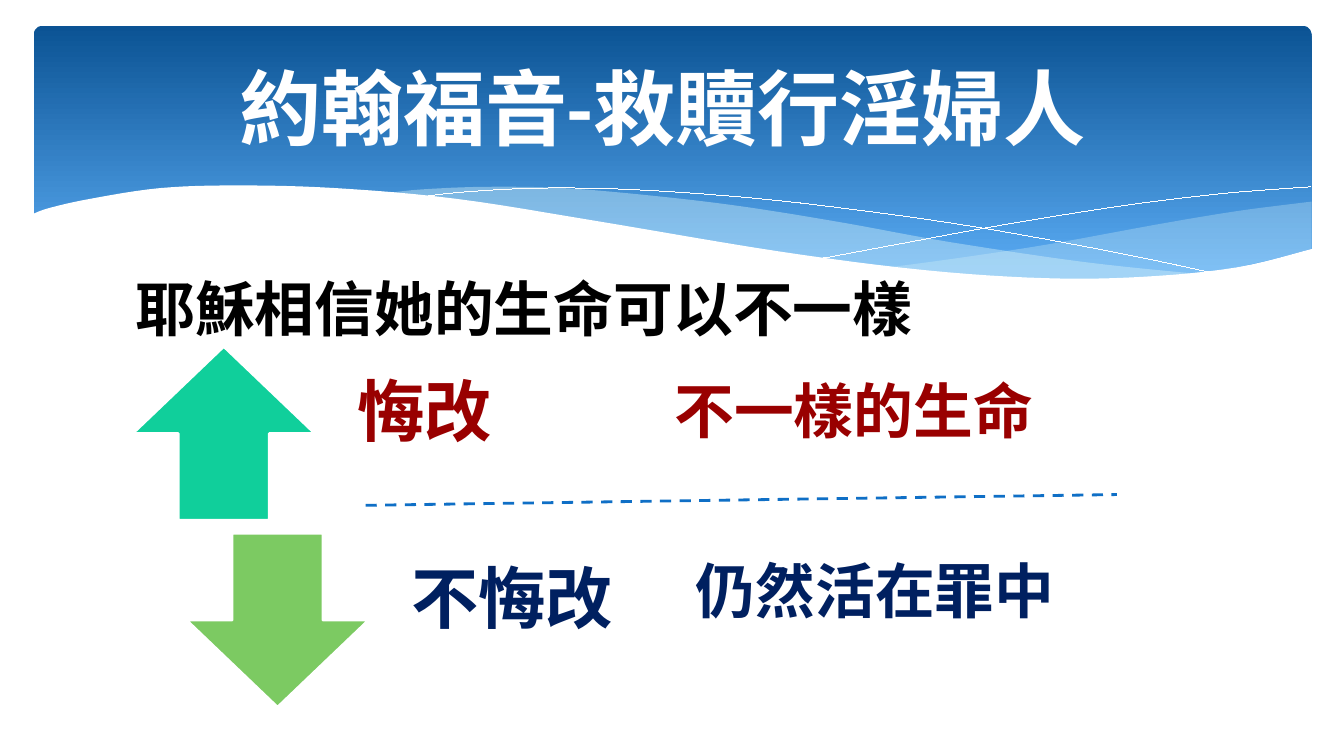
from dataclasses import dataclass

import pptx
import pptx.dml.color
import pptx.enum.dml
import pptx.enum.shapes
import pptx.enum.text
import pptx.oxml
import pptx.oxml.ns
import pptx.util

Inches, Pt = pptx.util.Inches, pptx.util.Pt
SHAPES = pptx.enum.shapes.MSO_SHAPE
TEXT = pptx.enum.text


@dataclass(frozen=True)
class Theme:
    font: str = "Calibri"
    title_size: int = 44
    choice_size: int = 36
    body_size: int = 32
    hairline: float = 0.01
    white: str = "FFFFFF"
    black: str = "000000"
    banner_top: str = "0B5394"
    banner_bottom: str = "59AAF2"
    wave: str = "DBF5F9"
    repent: str = "990000"
    refuse: str = "002060"
    up: str = "10CF9B"
    down: str = "7CCA62"
    divider: str = "0F6FC6"


THEME = Theme()

# Wave edges, in inches from the top left corner of the banner
RIGHT_BAND_TOP = [(9.51, 1.31), (8.96, 1.38), (8.36, 1.48), (7.54, 1.63), (6.81, 1.74), (6.36, 1.8)]
RIGHT_BAND_BOTTOM = [(6.36, 1.8), (6.94, 1.85), (7.56, 1.89), (8.19, 1.88), (8.72, 1.84),
                     (9.17, 1.75), (9.51, 1.66)]
LONG_BAND_TOP = [(8.68, 1.85), (7.82, 1.76), (6.81, 1.61), (6.04, 1.47), (5.3, 1.35), (4.64, 1.27),
                 (3.95, 1.21), (3.36, 1.2), (2.88, 1.22), (2.61, 1.25)]
LONG_BAND_BOTTOM = [(2.61, 1.25), (3.37, 1.33), (4.24, 1.47), (5.05, 1.61), (5.93, 1.75), (6.7, 1.84),
                    (7.36, 1.89), (7.93, 1.9), (8.42, 1.88), (8.68, 1.85)]
FALLING_LINE = [(2.84, 1.28), (3.19, 1.24), (3.76, 1.21), (4.44, 1.22), (5.31, 1.28), (6.11, 1.37),
                (7.02, 1.5), (8.06, 1.69), (8.82, 1.85)]
RISING_LINE = [(5.88, 1.73), (6.47, 1.62), (7.23, 1.48), (8.11, 1.34), (8.85, 1.25), (9.5, 1.2)]
PAGE_EDGE = [(9.52, 1.66), (8.95, 1.8), (8.25, 1.87), (7.53, 1.88), (6.63, 1.82), (5.54, 1.68),
             (4.22, 1.46), (3.15, 1.29), (2.25, 1.21), (1.52, 1.19), (0.94, 1.21), (0.42, 1.29),
             (0.11, 1.36), (-0.02, 1.41)]


def rgb(color):
    return pptx.dml.color.RGBColor.from_string(color)


def smooth(points, steps=6):
    """Catmull-Rom curve through the points."""
    padded = [points[0], *points, points[-1]]
    curve = [points[0]]
    for a, b, c, d in zip(padded, padded[1:], padded[2:], padded[3:]):
        for t in (step / steps for step in range(1, steps + 1)):
            curve.append(tuple(
                (2 * q + (r - p) * t + (2 * p - 5 * q + 4 * r - s) * t ** 2
                 + (3 * q - p - 3 * r + s) * t ** 3) / 2
                for p, q, r, s in zip(a, b, c, d)))
    return curve


def paint(shape, fill=None, line=None, width=THEME.hairline, alpha=None):
    shape.shadow.inherit = False
    if fill:
        shape.fill.solid()
        shape.fill.fore_color.rgb = rgb(fill)
        if alpha is not None:
            color = shape.fill._xPr.find(".//" + pptx.oxml.ns.qn("a:srgbClr"))
            opacity = color.makeelement(pptx.oxml.ns.qn("a:alpha"), {"val": str(alpha * 1000)})
            color.append(opacity)
    else:
        shape.fill.background()
    if line:
        shape.line.color.rgb = rgb(line)
        shape.line.width = Pt(width)
    else:
        shape.line.fill.background()


def outline(slide, left, top, points, closed=True):
    start, *rest = [(Inches(left + x), Inches(top + y)) for x, y in points]
    builder = slide.shapes.build_freeform(*start)
    builder.add_line_segments(rest, close=closed)
    return builder.convert_to_shape()


def write(frame, words, size, color):
    frame.text = words
    font = frame.paragraphs[0].runs[0].font
    font.name, font.size, font.bold = THEME.font, Pt(size), True
    font.color.rgb = rgb(color)


def add_banner(slide, left, top, width, height):
    panel = slide.shapes.add_shape(SHAPES.ROUNDED_RECTANGLE, Inches(left), Inches(top),
                                   Inches(width), Inches(height))
    panel.adjustments[0] = 0.034
    paint(panel)
    panel.fill.gradient()
    panel.fill.gradient_angle = 270
    stops = zip(panel.fill.gradient_stops, (0, 0.9), (THEME.banner_top, THEME.banner_bottom))
    for stop, position, color in stops:
        stop.position = position
        stop.color.rgb = rgb(color)

    # Translucent bands, then the two hairlines
    for upper, lower, alpha in ((RIGHT_BAND_TOP, RIGHT_BAND_BOTTOM, 29),
                                (LONG_BAND_TOP, LONG_BAND_BOTTOM, 40)):
        band = outline(slide, left, top, smooth(upper) + smooth(lower))
        paint(band, THEME.wave, alpha=alpha)
    for points in (FALLING_LINE, RISING_LINE):
        paint(outline(slide, left, top, smooth(points), closed=False), line=THEME.white)

    # White page rising over the foot of the banner
    foot = [(-0.02, 2.28), (width + 0.01, 2.28)]
    paint(outline(slide, left, top, smooth(PAGE_EDGE) + foot), THEME.white)


def add_title(slide, words, left, top, width, height):
    title = slide.shapes.title
    slide.shapes._spTree.append(title._element)  # in front of the banner
    title.left, title.top = Inches(left), Inches(top)
    title.width, title.height = Inches(width), Inches(height)
    write(title.text_frame, words, THEME.title_size, THEME.white)
    title.text_frame.vertical_anchor = TEXT.MSO_ANCHOR.MIDDLE
    title.text_frame.paragraphs[0].alignment = TEXT.PP_ALIGN.CENTER


def add_statement(slide, words, color, left, top, width, height=0.64):
    statement = slide.shapes.add_textbox(Inches(left), Inches(top), Inches(width), Inches(height))
    write(statement.text_frame, words, THEME.body_size, color)
    statement.text_frame.word_wrap = False
    statement.text_frame.auto_size = TEXT.MSO_AUTO_SIZE.SHAPE_TO_FIT_TEXT


def add_choice(slide, arrow_kind, arrow_color, words, color, left, top):
    arrow_width, height = 1.35, 1.29
    arrow = slide.shapes.add_shape(arrow_kind, Inches(left), Inches(top),
                                   Inches(arrow_width), Inches(height))
    paint(arrow, arrow_color, THEME.white, 1.25)

    choice = slide.shapes.add_textbox(Inches(left + arrow_width + 0.04), Inches(top),
                                      Inches(2.29), Inches(height))
    frame = choice.text_frame
    write(frame, words, THEME.choice_size, color)
    frame.word_wrap = True
    frame.vertical_anchor = TEXT.MSO_ANCHOR.MIDDLE
    frame.margin_left = frame.margin_right = frame.margin_bottom = Inches(0.28)
    frame.margin_top = 0
    frame.paragraphs[0].line_spacing = 0.9
    frame.paragraphs[0].space_after = Pt(0.35 * THEME.choice_size)


def add_divider(slide, x1, y1, x2, y2):
    divider = slide.shapes.add_connector(pptx.enum.shapes.MSO_CONNECTOR.STRAIGHT, Inches(x1),
                                         Inches(y1), Inches(x2), Inches(y2))
    divider.line.color.rgb = rgb(THEME.divider)
    divider.line.width = Pt(1.5)
    divider.line.dash_style = pptx.enum.dml.MSO_LINE.DASH
    properties = divider._element.spPr
    properties.append(properties.makeelement(pptx.oxml.ns.qn("a:effectLst"), {}))


def main():
    deck = pptx.Presentation()
    deck.slide_width = Inches(10)
    deck.slide_height = Inches(10 * 9 / 16)  # widescreen
    slide = deck.slides.add_slide(deck.slide_layouts[5])

    add_banner(slide, 0.25, 0.19, 9.51, 2.02)
    add_title(slide, "約翰福音-救贖行淫婦人 ", 0.5, 0.28, 9, 1.03)

    # Two choices and where each one leads
    add_choice(slide, SHAPES.UP_ARROW, THEME.up, "悔改", THEME.repent, 0.99, 2.58)
    add_choice(slide, SHAPES.DOWN_ARROW, THEME.down, "不悔改", THEME.refuse, 1.39, 3.97)
    add_statement(slide, "不一樣的生命", THEME.repent, 4.92, 2.73, 2.89)
    add_statement(slide, "仍然活在罪中", THEME.refuse, 5.08, 4.07, 2.89)
    add_statement(slide, "耶穌相信她的生命可以不一樣", THEME.black, 0.91, 1.97, 6.04)
    add_divider(slide, 2.72, 3.76, 8.31, 3.68)

    deck.save("out.pptx")


if __name__ == "__main__":
    main()
